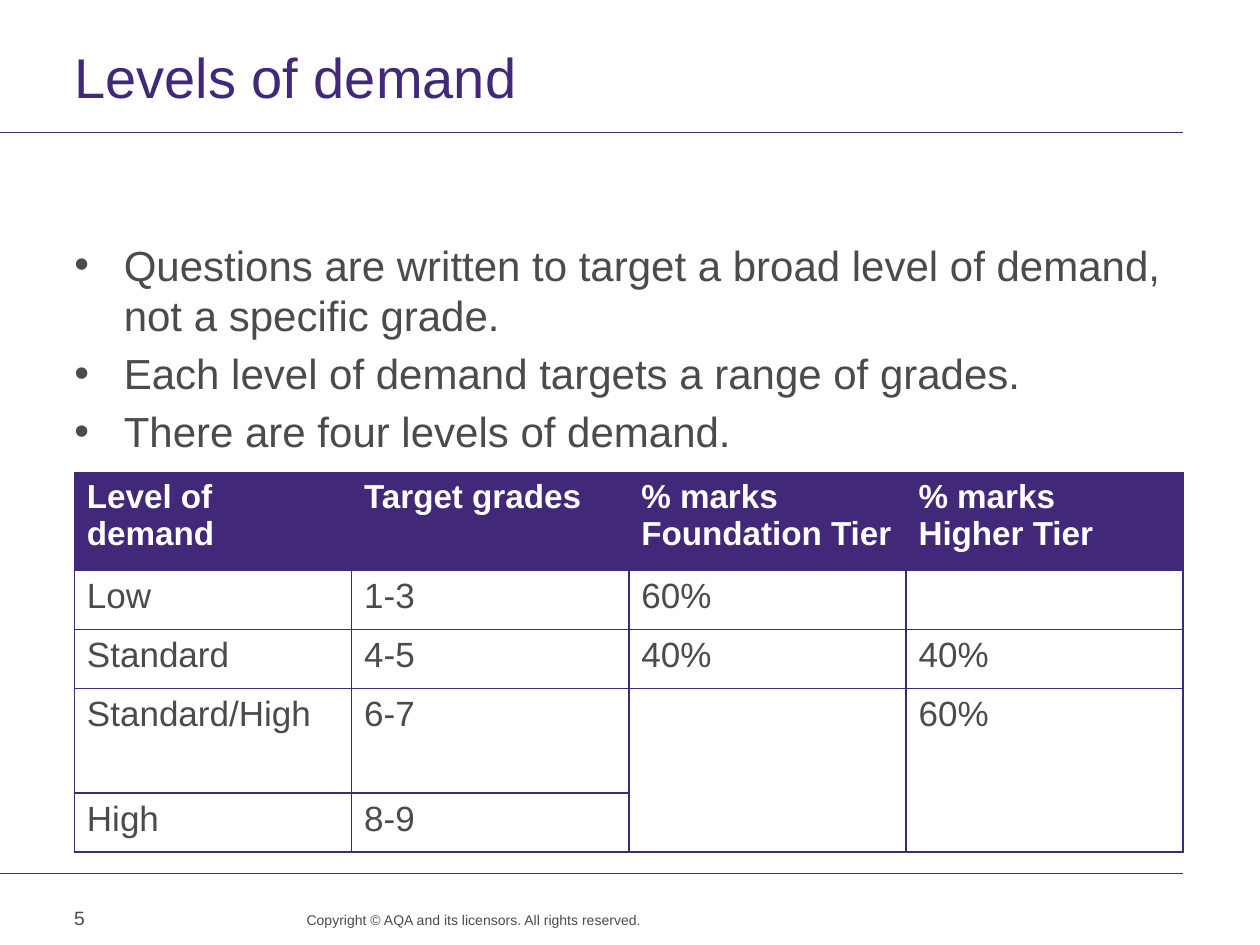
from typing import NamedTuple

from lxml.etree import SubElement
from pptx import Presentation as new_presentation
from pptx.dml.color import RGBColor
from pptx.enum.shapes import MSO_CONNECTOR as Connector
from pptx.enum.text import MSO_ANCHOR as Anchor, PP_ALIGN as Align
from pptx.oxml import parse_xml
from pptx.oxml.ns import nsdecls, qn
from pptx.util import Pt

PURPLE, GREY, WHITE = "412878", "4B4B4B", "FFFFFF"
LEFT, WIDTH = 42.5, 633.6
RIGHT = LEFT + WIDTH
ROW_HEIGHTS = (56, 33.8, 33.8, 59.6, 33.8)
ROWS = (
    ("Level of demand", "Target grades", "% marks Foundation Tier", "% marks\vHigher Tier"),
    ("Low", "1-3", "60%", ""),
    ("Standard", "4-5", "40%", "40%"),
    ("Standard/High", "6-7", "", "60%"),
    ("High", "8-9", "", ""),
)
BULLETS = (
    "Questions are written to target a broad level of demand, not a specific grade.",
    "Each level of demand targets a range of grades.",
    "There are four levels of demand.",
)


class Label(NamedTuple):
    lines: tuple
    left: float
    top: float
    width: float
    height: float
    size: float
    color: str = GREY
    spacing: float | None = None
    insets: tuple = (0, 0, 7.2, 0)
    align: Align = Align.LEFT
    anchor: Anchor = Anchor.TOP
    bulleted: bool = False


LABELS = (
    Label(("Levels of demand",), LEFT, 34.5, WIDTH, 34, 32, PURPLE, 28),
    Label(BULLETS, LEFT, 136.5, WIDTH, 130, 24, spacing=29, bulleted=True),
    Label(("5",), 35.3, 509.8, 54.7, 28.8, 11, insets=(7.2, 3.6, 7.2, 3.6),
          anchor=Anchor.MIDDLE),
    Label(("Copyright © AQA and its licensors. All rights reserved.",),
          155.5, 520.6, 211, 18.7, 8, spacing=10, insets=(0, 0, 0, 0), align=Align.RIGHT),
)


def rgb(color: str) -> RGBColor:
    return RGBColor.from_string(color)


def style_font(font, size: float, color: str, bold: bool = False) -> None:
    font.name, font.size, font.bold = "Arial", Pt(size), bold
    font.color.rgb = rgb(color)


def add_bullet(paragraph) -> None:
    properties = paragraph._p.get_or_add_pPr()
    properties.set("marL", str(Pt(28.3)))
    properties.set("indent", str(-Pt(28.3)))
    SubElement(properties, qn("a:buFont")).set("typeface", "Arial")
    SubElement(properties, qn("a:buChar")).set("char", "•")


def add_label(slide, label: Label) -> None:
    box = slide.shapes.add_textbox(
        Pt(label.left), Pt(label.top), Pt(label.width), Pt(label.height))
    frame = box.text_frame
    frame.word_wrap = True
    frame.vertical_anchor = label.anchor
    (frame.margin_left, frame.margin_top,
     frame.margin_right, frame.margin_bottom) = map(Pt, label.insets)
    frame.text = "\n".join(label.lines)
    for index, paragraph in enumerate(frame.paragraphs):
        if label.bulleted:
            add_bullet(paragraph)
            paragraph.space_before = Pt(4 if index else 0)
        if label.spacing:
            paragraph.line_spacing = Pt(label.spacing)
        paragraph.alignment = label.align
        style_font(paragraph.runs[0].font, label.size, label.color)


def add_rule(slide, y: float) -> None:
    rule = slide.shapes.add_connector(Connector.STRAIGHT, 0, Pt(y), Pt(RIGHT), Pt(y))
    rule.line.color.rgb = rgb(PURPLE)
    rule.line.width = Pt(0.6)
    SubElement(rule._element.spPr, qn("a:effectLst"))


def style_cell(cell, text: str, header: bool) -> None:
    cell.text = text
    cell.fill.solid()
    cell.fill.fore_color.rgb = rgb(PURPLE if header else WHITE)
    for paragraph in cell.text_frame.paragraphs:
        for run in paragraph.runs:
            style_font(run.font, 19 if header else 20, WHITE if header else GREY, header)
    properties = cell._tc.get_or_add_tcPr()
    for index, side in enumerate(("lnL", "lnR", "lnT", "lnB")):
        properties.insert(index, parse_xml(
            f'<a:{side} {nsdecls("a")} w="{Pt(1)}"><a:solidFill>'
            f'<a:srgbClr val="{PURPLE}"/></a:solidFill></a:{side}>'))


def add_demand_table(slide) -> None:
    table = slide.shapes.add_table(
        len(ROWS), len(ROWS[0]), Pt(LEFT), Pt(270), Pt(WIDTH), Pt(sum(ROW_HEIGHTS))).table
    for column in table.columns:
        column.width = Pt(WIDTH / len(ROWS[0]))
    for row_index, (height, texts) in enumerate(zip(ROW_HEIGHTS, ROWS)):
        table.rows[row_index].height = Pt(height)
        for column_index, text in enumerate(texts):
            style_cell(table.cell(row_index, column_index), text, row_index == 0)
    for column_index in (2, 3):
        table.cell(3, column_index).merge(table.cell(4, column_index))


def main() -> None:
    presentation = new_presentation()
    presentation.slide_width, presentation.slide_height = Pt(720), Pt(540)
    slide = presentation.slides.add_slide(presentation.slide_layouts[6])
    for y in (75.6, 499):
        add_rule(slide, y)
    for label in LABELS:
        add_label(slide, label)
    add_demand_table(slide)
    presentation.save("out.pptx")


if __name__ == "__main__":
    main()
